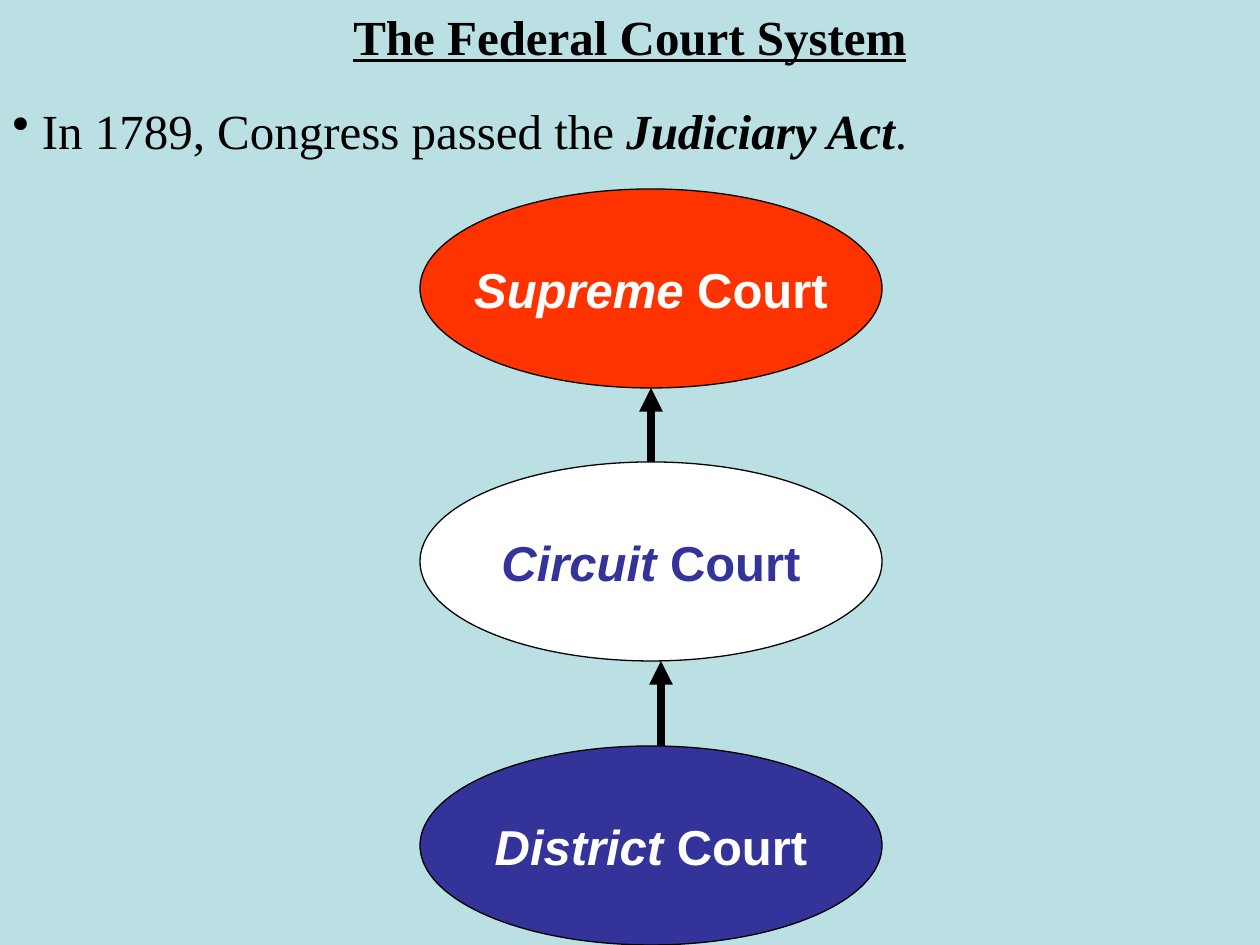
import pptx
import pptx.util
import pptx.dml.color
import pptx.enum.shapes
import pptx.enum.text
import pptx.oxml.ns
import lxml.etree

PX = 914400 // 126
COLORS = {
    "background": "BBE0E3",
    "black": "000000",
    "white": "FFFFFF",
    "red": "FF3300",
    "blue": "333399",
}


def color(name):
    return pptx.dml.color.RGBColor.from_string(COLORS[name])


def add_spans(para, spans, font_name, color_name):
    for text, formats in spans:
        span = para.add_run()
        span.text = text
        span.font.color.rgb = color(color_name)
        values = {"name": font_name, "size": pptx.util.Pt(28), **formats}
        for attribute, value in values.items():
            setattr(span.font, attribute, value)


deck = pptx.Presentation()
deck.slide_width = pptx.util.Inches(10)
deck.slide_height = pptx.util.Inches(7.5)
page = deck.slides.add_slide(deck.slide_layouts[6])
page.background.fill.solid()
page.background.fill.fore_color.rgb = color("background")

# Title and bullet line
CENTER = pptx.enum.text.PP_ALIGN.CENTER
LEFT = pptx.enum.text.PP_ALIGN.LEFT
text_lines = [
    (0, CENTER, None, [("The Federal Court System", {"bold": True, "underline": True})]),
    (94, LEFT, "•", [
        (" In 1789, Congress passed the ", {}),
        ("Judiciary Act", {"bold": True, "italic": True}),
        (".", {}),
    ]),
]
for top, alignment, bullet, spans in text_lines:
    box = page.shapes.add_textbox(0, top * PX, 1260 * PX, 72 * PX)
    box.text_frame.word_wrap = True
    para = box.text_frame.paragraphs[0]
    para.alignment = alignment
    if bullet:
        properties = para._p.get_or_add_pPr()
        mark = lxml.etree.SubElement(properties, pptx.oxml.ns.qn("a:buChar"))
        mark.set("char", bullet)
    add_spans(para, spans, "Times New Roman", "black")

# Courts, from highest to lowest
courts = [
    (189, "Supreme", "red", "white"),
    (462, "Circuit", "white", "blue"),
    (746, "District", "blue", "white"),
]
for top, court, fill_name, text_name in courts:
    oval = page.shapes.add_shape(
        pptx.enum.shapes.MSO_SHAPE.OVAL, 420 * PX, top * PX, 462 * PX, 199 * PX)
    oval.shadow.inherit = False
    oval.fill.solid()
    oval.fill.fore_color.rgb = color(fill_name)
    oval.line.color.rgb = color("black")
    oval.line.width = pptx.util.Pt(0.75)
    oval.text_frame.word_wrap = False
    oval.text_frame.vertical_anchor = pptx.enum.text.MSO_ANCHOR.MIDDLE
    para = oval.text_frame.paragraphs[0]
    para.alignment = CENTER
    spans = [(court, {"bold": True, "italic": True}), (" Court", {"bold": True})]
    add_spans(para, spans, "Arial", text_name)

# Arrows up to the next higher court
for x, start, end in [(651, 514, 388), (661, 746, 661)]:
    start = min(start, 746) if x == 661 else 514
    arrow = page.shapes.add_connector(
        pptx.enum.shapes.MSO_CONNECTOR.STRAIGHT, x * PX, start * PX, x * PX, end * PX)
    arrow.line.color.rgb = color("black")
    arrow.line.width = pptx.util.Pt(4.5)
    head = lxml.etree.SubElement(arrow.line._get_or_add_ln(), pptx.oxml.ns.qn("a:tailEnd"))
    head.set("type", "triangle")
    lxml.etree.SubElement(arrow._element.spPr, pptx.oxml.ns.qn("a:effectLst"))

    # The upper arrow starts behind the Circuit Court oval
    if x == 651:
        page.shapes._spTree.insert(2, arrow._element)

deck.save("out.pptx")
